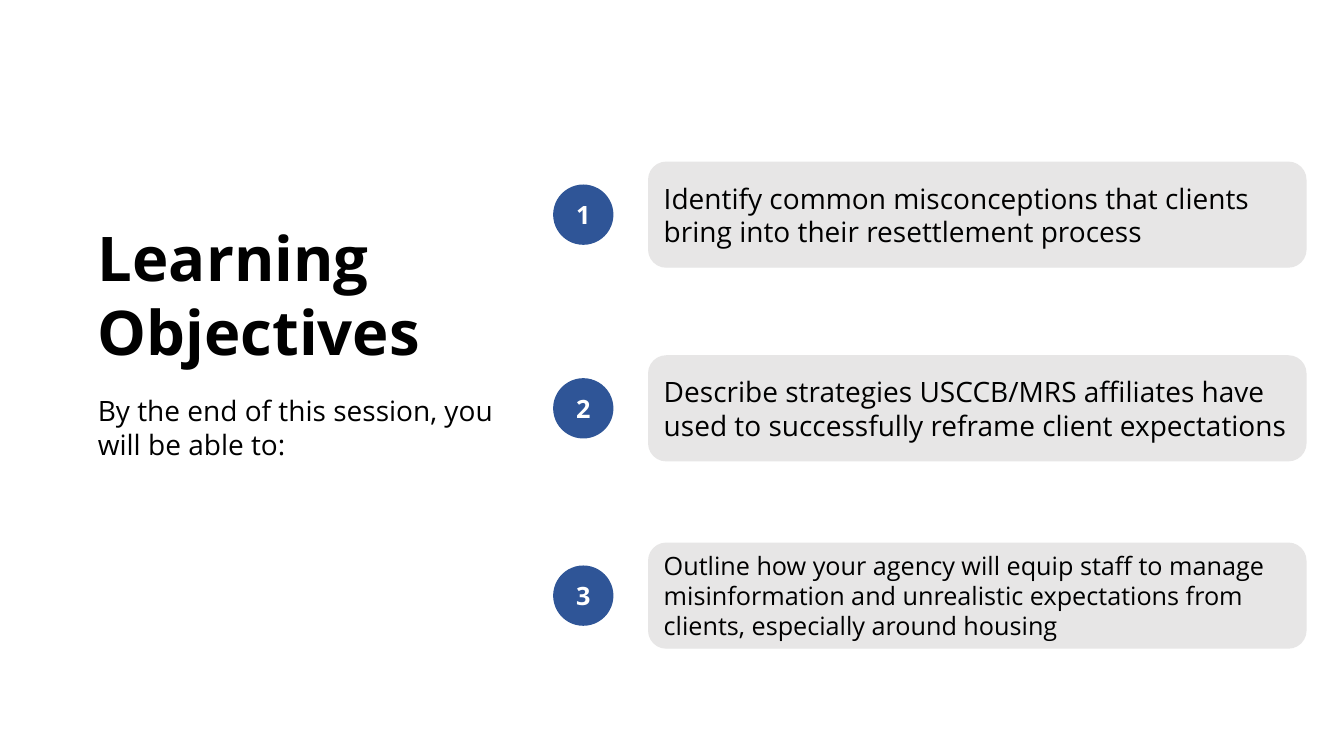
from pptx import Presentation
from pptx.dml.color import RGBColor
from pptx.enum.shapes import MSO_SHAPE
from pptx.enum.text import MSO_ANCHOR, MSO_AUTO_SIZE, PP_ALIGN
from pptx.oxml import parse_xml
from pptx.oxml.ns import nsdecls
from pptx.util import Cm, Pt

BLACK = RGBColor(0x00, 0x00, 0x00)
WHITE = RGBColor(0xFF, 0xFF, 0xFF)
BLUE = RGBColor(0x2F, 0x55, 0x97)
GREY = RGBColor(0xE7, 0xE6, 0xE6)
FONT = "Open Sans"

GOALS = [
    (4.09, 20, "Identify common misconceptions that clients bring into their "
               "resettlement process"),
    (8.97, 20, "Describe strategies USCCB/MRS affiliates have used to "
               "successfully reframe client expectations"),
    (13.69, 18, "Outline how your agency will equip staff to manage "
                "misinformation and unrealistic expectations from clients, "
                "especially around housing"),
]


def write(shape, text, size, color=BLACK, bold=False, align=PP_ALIGN.LEFT,
          anchor=MSO_ANCHOR.MIDDLE):
    frame = shape.text_frame
    frame.text = text
    frame.word_wrap = True
    frame.auto_size = MSO_AUTO_SIZE.NONE
    frame.vertical_anchor = anchor
    for para in frame.paragraphs:
        para.alignment = align
        para.space_before = Pt(0)
        para.font.name = FONT
        para.font.size = Pt(size)
        para.font.bold = bold
        para.font.color.rgb = color


def place(shape, left, top, width, height):
    shape.left, shape.top = Cm(left), Cm(top)
    shape.width, shape.height = Cm(width), Cm(height)


def add_panel(slide, kind, fill, left, top, width, height):
    panel = slide.shapes.add_shape(kind, Cm(left), Cm(top), Cm(width), Cm(height))
    panel.shadow.inherit = False
    panel.fill.solid()
    panel.fill.fore_color.rgb = fill
    panel.line.fill.background()
    return panel


def add_intro(slide, left, top, width):
    """Heading with the lead-in sentence below it."""
    title, body = slide.shapes.title, slide.placeholders[1]
    place(title, left, top, width, 4.01)
    write(title, "Learning\nObjectives", 44, bold=True, anchor=MSO_ANCHOR.TOP)
    place(body, left, top + 4.39, width, 1.96)
    write(body, "By the end of this session, you will be able to:", 20,
          anchor=MSO_ANCHOR.TOP)
    props = body.text_frame.paragraphs[0]._p.get_or_add_pPr()
    props.set("marL", "0")
    props.set("indent", "0")
    props.append(parse_xml(f"<a:buNone {nsdecls('a')}/>"))


def add_goal(slide, number, text, size, left, top, width, height):
    """Numbered disc, centred on the height of the card to its right."""
    disc, shift = 1.52, 2.41
    badge = add_panel(slide, MSO_SHAPE.OVAL, BLUE, left,
                      top + (height - disc) / 2, disc, disc)
    write(badge, str(number), 18, color=WHITE, bold=True, align=PP_ALIGN.CENTER)
    card = add_panel(slide, MSO_SHAPE.ROUNDED_RECTANGLE, GREY, left + shift, top,
                     width - shift, height)
    card.line.color.rgb = GREY
    card.line.width = Pt(1)
    write(card, text, size)


def main():
    deck = Presentation()
    deck.slide_width, deck.slide_height = Cm(33.87), Cm(19.05)
    slide = deck.slides.add_slide(deck.slide_layouts[1])
    add_intro(slide, 2.21, 5.41, 10.59)
    for number, (top, size, text) in enumerate(GOALS, 1):
        add_goal(slide, number, text, size, 13.94, top, 18.97, 2.64)
    deck.save("out.pptx")


if __name__ == "__main__":
    main()
